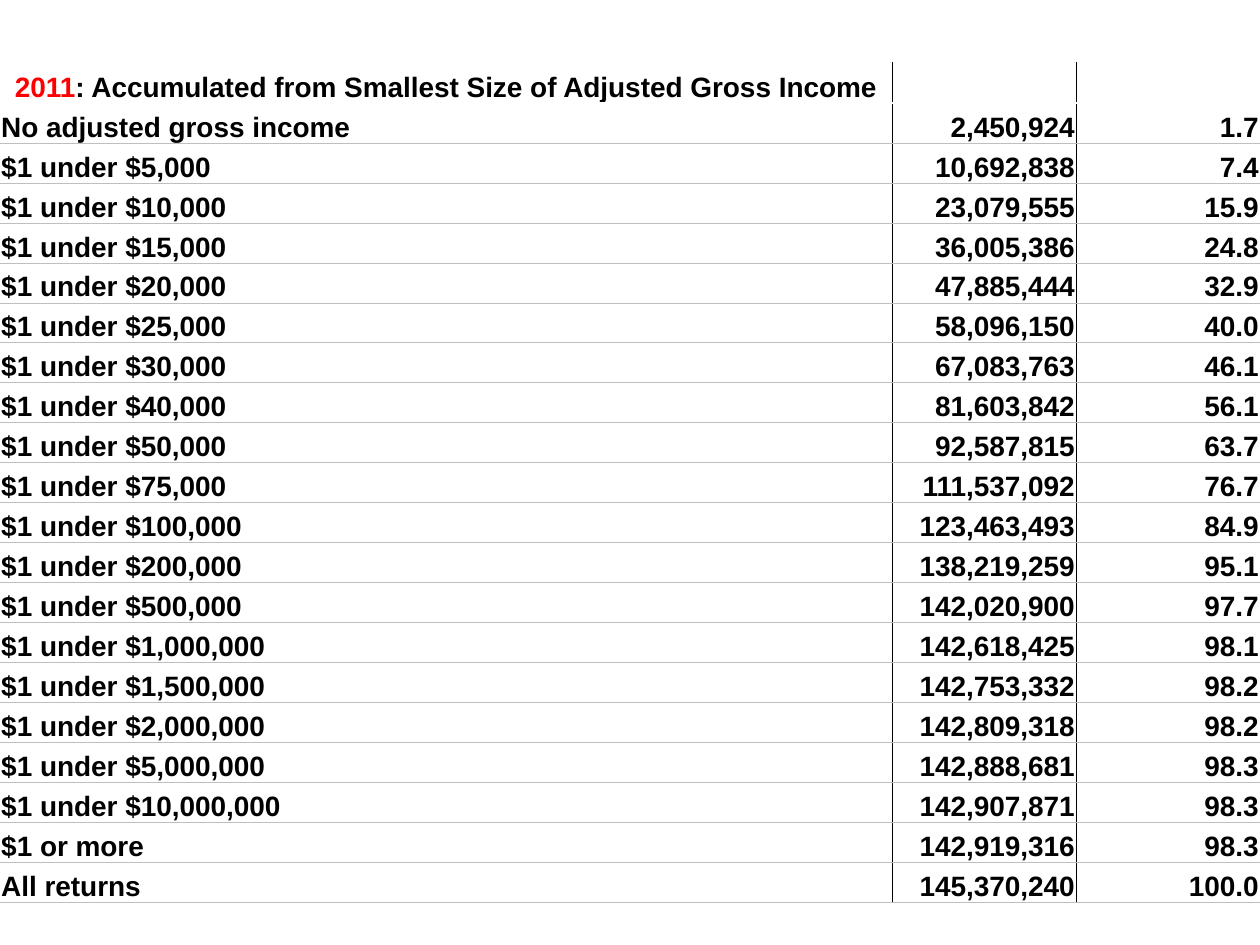
from typing import NamedTuple

from lxml import etree
from pptx import Presentation
from pptx import util as u
from pptx.dml import color
from pptx.enum import text
from pptx.oxml import ns

BLACK, RED, GREY = "000000", "FF0000", "BFBFBF"
COLUMN_WIDTHS = (7.08, 1.46, 1.46)
TABLE_HEIGHT = 6.67


class IncomeRow(NamedTuple):
    size: str
    returns: str
    percent: str


ROWS = [
    IncomeRow("No adjusted gross income", "2,450,924", "1.7"),
    IncomeRow("$1 under $5,000", "10,692,838", "7.4"),
    IncomeRow("$1 under $10,000", "23,079,555", "15.9"),
    IncomeRow("$1 under $15,000", "36,005,386", "24.8"),
    IncomeRow("$1 under $20,000", "47,885,444", "32.9"),
    IncomeRow("$1 under $25,000", "58,096,150", "40.0"),
    IncomeRow("$1 under $30,000", "67,083,763", "46.1"),
    IncomeRow("$1 under $40,000", "81,603,842", "56.1"),
    IncomeRow("$1 under $50,000", "92,587,815", "63.7"),
    IncomeRow("$1 under $75,000", "111,537,092", "76.7"),
    IncomeRow("$1 under $100,000", "123,463,493", "84.9"),
    IncomeRow("$1 under $200,000", "138,219,259", "95.1"),
    IncomeRow("$1 under $500,000", "142,020,900", "97.7"),
    IncomeRow("$1 under $1,000,000", "142,618,425", "98.1"),
    IncomeRow("$1 under $1,500,000", "142,753,332", "98.2"),
    IncomeRow("$1 under $2,000,000", "142,809,318", "98.2"),
    IncomeRow("$1 under $5,000,000", "142,888,681", "98.3"),
    IncomeRow("$1 under $10,000,000", "142,907,871", "98.3"),
    IncomeRow("$1 or more", "142,919,316", "98.3"),
    IncomeRow("All returns", "145,370,240", "100.0"),
]


def rgb(value: str) -> color.RGBColor:
    return color.RGBColor.from_string(value)


def add_border(cell, side: str, value: str) -> None:
    properties = cell._tc.get_or_add_tcPr()
    line = etree.SubElement(properties, ns.qn(f"a:ln{side}"), w=str(u.Pt(0.5)))
    fill = etree.SubElement(line, ns.qn("a:solidFill"))
    etree.SubElement(fill, ns.qn("a:srgbClr"), val=value)


def format_cell(cell, row: int, column: int) -> None:
    cell.margin_left = cell.margin_right = cell.margin_top = u.Inches(0.01)
    cell.margin_bottom = 0
    cell.vertical_anchor = text.MSO_ANCHOR.BOTTOM
    if column > 0:
        add_border(cell, "L", BLACK)
    if column < len(COLUMN_WIDTHS) - 1:
        add_border(cell, "R", BLACK)
    if row > 1:
        add_border(cell, "T", GREY)
    if row > 0:
        add_border(cell, "B", GREY)
    cell.fill.background()
    paragraph = cell.text_frame.paragraphs[0]
    paragraph.alignment = text.PP_ALIGN.RIGHT if column else text.PP_ALIGN.LEFT
    font = paragraph.font
    font.name, font.size, font.bold = "Arial", u.Pt(16), True
    font.color.rgb = rgb(BLACK)


def add_heading(cell) -> None:
    paragraph = cell.text_frame.paragraphs[0]
    paragraph.alignment = text.PP_ALIGN.CENTER
    year = paragraph.add_run()
    year.text = "2011"
    year.font.color.rgb = rgb(RED)
    paragraph.add_run().text = ": Accumulated from Smallest Size of Adjusted Gross Income"


def add_income_table(slide) -> None:
    row_count = len(ROWS) + 1
    table = slide.shapes.add_table(
        row_count, len(COLUMN_WIDTHS), 0, u.Inches(0.5),
        u.Inches(sum(COLUMN_WIDTHS)), u.Inches(TABLE_HEIGHT),
    ).table
    table.first_row = table.horz_banding = False
    for column, width in zip(table.columns, COLUMN_WIDTHS):
        column.width = u.Inches(width)
    for row in table.rows:
        row.height = u.Inches(TABLE_HEIGHT / row_count)
    for row_index, values in enumerate([IncomeRow("", "", ""), *ROWS]):
        for column_index, value in enumerate(values):
            cell = table.cell(row_index, column_index)
            if value:
                cell.text = value
            format_cell(cell, row_index, column_index)
    add_heading(table.cell(0, 0))


def main() -> None:
    presentation = Presentation()
    presentation.slide_width = u.Inches(10)
    presentation.slide_height = u.Inches(7.5)
    slide = presentation.slides.add_slide(presentation.slide_layouts[6])
    add_income_table(slide)
    presentation.save("out.pptx")


if __name__ == "__main__":
    main()
